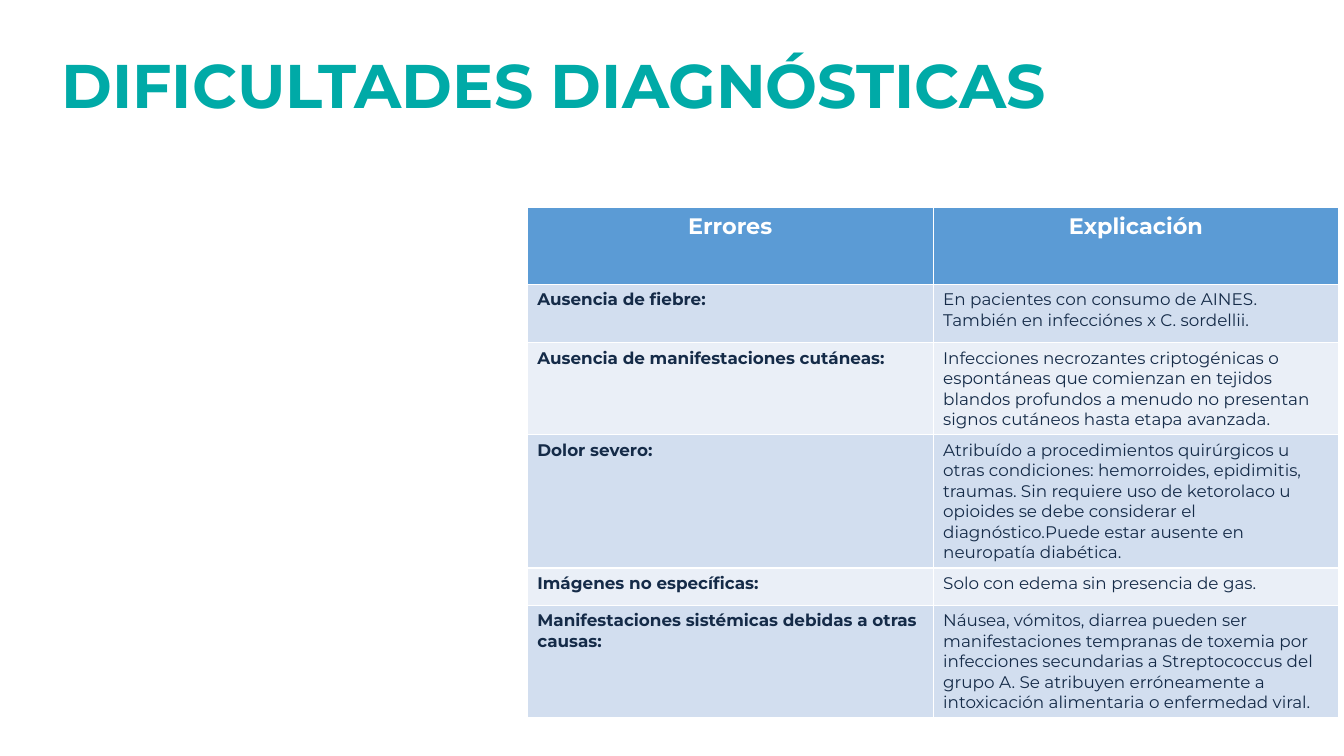
from pptx import Presentation
from pptx.dml.color import RGBColor
from pptx.enum.text import MSO_ANCHOR as Anchor, MSO_AUTO_SIZE as AutoSize, PP_ALIGN as Align
from pptx.util import Inches, Pt

TITLE = "DIFICULTADES DIAGNÓSTICAS"
HEADINGS = ("Errores", "Explicación")
DIFFICULTIES = [
    ("Ausencia de fiebre:",
     "En pacientes con consumo de AINES. También en infecciónes x C. sordellii."),
    ("Ausencia de manifestaciones cutáneas:",
     "Infecciones necrozantes criptogénicas o espontáneas que comienzan en tejidos blandos "
     "profundos a menudo no presentan signos cutáneos hasta etapa avanzada."),
    ("Dolor severo:",
     "Atribuído a procedimientos quirúrgicos u otras condiciones: hemorroides, epidimitis, "
     "traumas. Sin requiere uso de ketorolaco u opioides se debe considerar el "
     "diagnóstico.Puede estar ausente en neuropatía diabética."),
    ("Imágenes no específicas:",
     "Solo con edema sin presencia de gas."),
    ("Manifestaciones sistémicas debidas a otras causas:",
     "Náusea, vómitos, diarrea pueden ser manifestaciones tempranas de toxemia por "
     "infecciones secundarias a Streptococcus del grupo A. Se atribuyen erróneamente a "
     "intoxicación alimentaria o enfermedad viral."),
]
ROW_HEIGHTS = (0.76, 0.58, 0.76, 0.77, 0.37, 0.77)
COLORS = {
    "title": "00AAA7",
    "heading": "FFFFFF",
    "text": "152B48",
    "heading_fill": "5B9BD5",
    "odd_fill": "D2DEEF",
    "even_fill": "EAEFF7",
}
FORMATS = {
    "title": {"size": Pt(44), "bold": True},
    "heading": {"size": Pt(16), "bold": True},
    "error": {"size": Pt(12), "bold": True},
    "explanation": {"size": Pt(12), "bold": False},
}


def write(frame, wording, style, color, align=Align.LEFT):
    frame.text = wording
    paragraph = frame.paragraphs[0]
    paragraph.alignment = align
    font = paragraph.runs[0].font
    font.name = "Montserrat"
    font.color.rgb = RGBColor.from_string(COLORS[color])
    for attribute, value in FORMATS[style].items():
        setattr(font, attribute, value)


def fill_cell(cell, color):
    cell.fill.solid()
    cell.fill.fore_color.rgb = RGBColor.from_string(COLORS[color])


def main():
    deck = Presentation()
    deck.slide_width, deck.slide_height = Inches(13.33), Inches(7.5)
    slide = deck.slides.add_slide(deck.slide_layouts[5])

    title = slide.shapes.title
    title.left, title.top = Inches(0.51), Inches(0.15)
    title.width, title.height = Inches(11.5), Inches(1.45)
    write(title.text_frame, TITLE, "title", "title")
    title.text_frame.auto_size = AutoSize.NONE
    title.text_frame.vertical_anchor = Anchor.MIDDLE
    title.text_frame.paragraphs[0].line_spacing = 0.9

    difficulties = slide.shapes.add_table(
        len(ROW_HEIGHTS), len(HEADINGS), Inches(5.23), Inches(2.06),
        Inches(8.05), Inches(sum(ROW_HEIGHTS))).table
    for row, height in zip(difficulties.rows, ROW_HEIGHTS):
        row.height = Inches(height)

    for column, heading in enumerate(HEADINGS):
        cell = difficulties.cell(0, column)
        fill_cell(cell, "heading_fill")
        write(cell.text_frame, heading, "heading", "heading", Align.CENTER)

    for number, difficulty in enumerate(DIFFICULTIES, 1):
        band = "odd_fill" if number % 2 else "even_fill"
        for column, style in enumerate(("error", "explanation")):
            cell = difficulties.cell(number, column)
            fill_cell(cell, band)
            write(cell.text_frame, difficulty[column], style, "text")

    deck.save("out.pptx")


if __name__ == "__main__":
    main()
